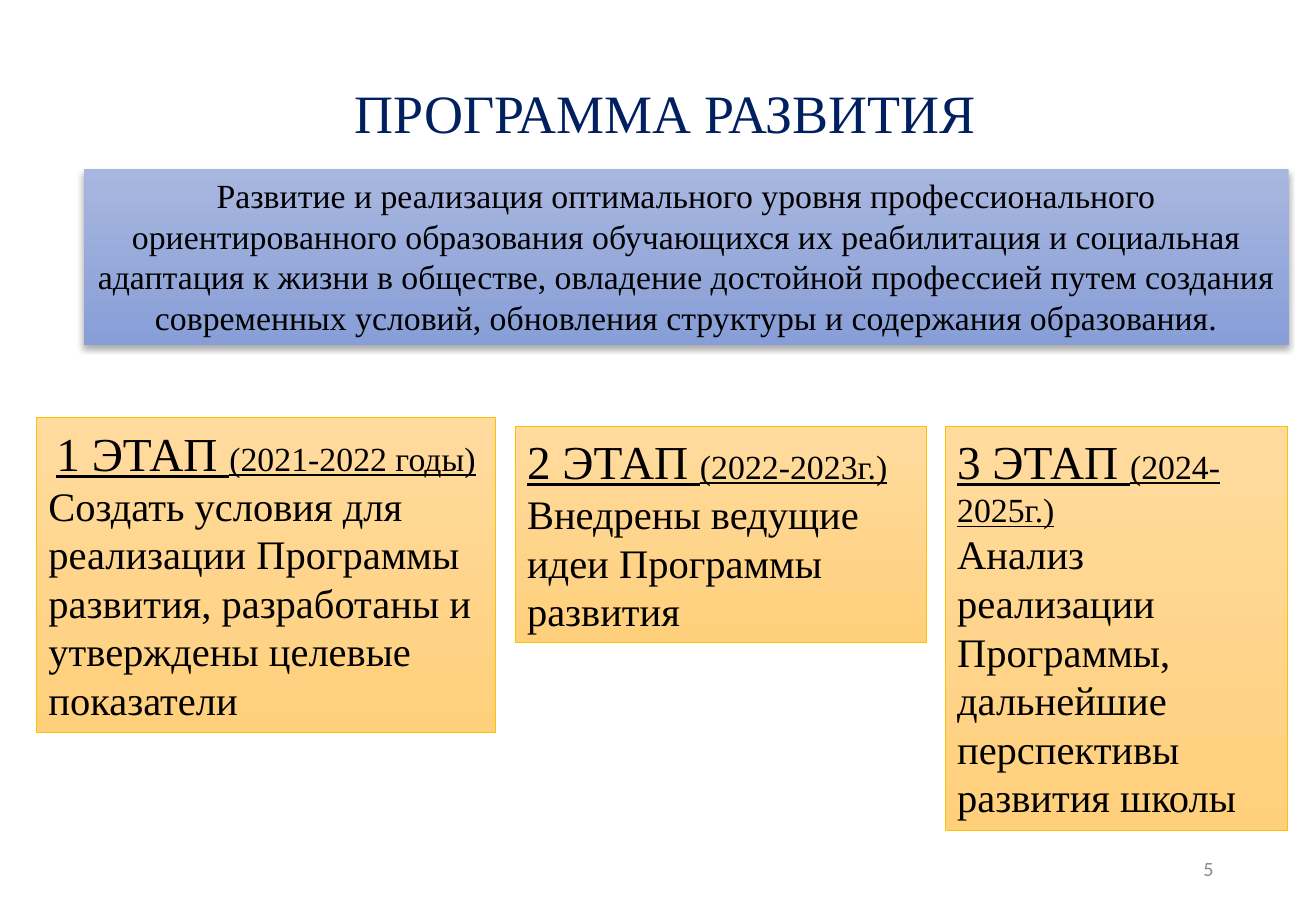
"""Build the development programme slide with its goal and three stages."""
from lxml import etree
from pptx import Presentation
from pptx.dml.color import RGBColor
from pptx.enum import shapes, text
from pptx.oxml import ns
from pptx.util import Pt

NAVY = RGBColor(0x00, 0x20, 0x60)
BLACK = RGBColor(0x00, 0x00, 0x00)
GRAY = RGBColor(0x8C, 0x8C, 0x8C)
BLUE_TOP = RGBColor(0xA8, 0xB7, 0xDF)
BLUE_BOTTOM = RGBColor(0x88, 0x9E, 0xD7)
AMBER_TOP = RGBColor(0xFF, 0xDB, 0x9E)
AMBER_BOTTOM = RGBColor(0xFF, 0xD0, 0x7C)
AMBER_LINE = RGBColor(0xFF, 0xC0, 0x00)

GOAL = (
    "Развитие и реализация оптимального уровня профессионального "
    "ориентированного образования обучающихся их реабилитация и социальная "
    "адаптация к жизни в обществе, овладение достойной профессией путем создания "
    "современных условий, обновления структуры и содержания образования."
)
LEFT, CENTER, RIGHT = text.PP_ALIGN.LEFT, text.PP_ALIGN.CENTER, text.PP_ALIGN.RIGHT
STAGES = [
    ("1 ЭТАП ", "(2021-2022 годы)", CENTER,
     "Создать условия для реализации Программы развития, "
     "разработаны и утверждены целевые показатели", (21.6, 247.7, 272.2, 186.5)),
    ("2 ЭТАП ", "(2022-2023г.)", LEFT,
     "Внедрены ведущие идеи Программы развития", (305.3, 252.7, 244.1, 128.2)),
    ("3 ЭТАП ", "(2024-2025г.)", LEFT,
     "Анализ реализации Программы, дальнейшие перспективы развития школы",
     (560.2, 252.7, 203, 239.8)),
]


class Painter:
    """Hold the text style and the page being drawn."""

    def __init__(self, page, font):
        self.page = page
        self.font = font

    def style(self, span, size, color=BLACK, font=None, underline=None):
        span.font.name = font or self.font
        span.font.size = Pt(size)
        span.font.color.rgb = color
        span.font.underline = underline

    def label(self, place, words, size, color, align, wrap=True, font=None):
        box = self.page.shapes.add_textbox(*map(Pt, place))
        frame = box.text_frame
        frame.text = words
        frame.word_wrap = wrap
        frame.vertical_anchor = text.MSO_ANCHOR.MIDDLE
        para = frame.paragraphs[0]
        para.alignment = align
        self.style(para.runs[0], size, color, font)

    def panel(self, place, top, bottom, line=None):
        box = self.page.shapes.add_shape(shapes.MSO_SHAPE.RECTANGLE, *map(Pt, place))
        box.shadow.inherit = False
        box.fill.gradient()
        box.fill.gradient_angle = 270
        for stop, color in zip(box.fill.gradient_stops, (top, bottom)):
            stop.color.rgb = color
        if line is None:
            box.line.fill.background()
        else:
            box.line.color.rgb = line
            box.line.width = Pt(0.5)
        box.text_frame.word_wrap = True
        box.text_frame.vertical_anchor = text.MSO_ANCHOR.TOP
        return box

    def drop_shadow(self, box):
        effects = box._element.spPr.find(ns.qn("a:effectLst"))
        shadow = etree.SubElement(
            effects, ns.qn("a:outerShdw"), blurRad=str(Pt(3.5)), dist=str(Pt(2.2)),
            dir="5400000", algn="ctr", rotWithShape="0")
        color = etree.SubElement(shadow, ns.qn("a:srgbClr"), val=str(BLACK))
        etree.SubElement(color, ns.qn("a:alpha"), val="32000")

    def goal(self, place, words):
        box = self.panel(place, BLUE_TOP, BLUE_BOTTOM)
        self.drop_shadow(box)
        box.text_frame.text = words
        para = box.text_frame.paragraphs[0]
        para.alignment = CENTER
        self.style(para.runs[0], 20)

    def stage(self, name, years, align, task, place):
        frame = self.panel(place, AMBER_TOP, AMBER_BOTTOM, AMBER_LINE).text_frame
        frame.text = f"{name}\n{task}"
        heading, body = frame.paragraphs
        heading.alignment, body.alignment = align, LEFT
        self.style(heading.runs[0], 28, underline=True)
        span = heading.add_run()
        span.text = years
        self.style(span, 20, underline=True)
        self.style(body.runs[0], 24)


def main():
    deck = Presentation()
    deck.slide_width, deck.slide_height = Pt(780), Pt(540)
    painter = Painter(deck.slides.add_slide(deck.slide_layouts[6]), "Times New Roman")
    painter.label((550.8, 500.4, 175.7, 28.8), "5", 12, GRAY, RIGHT, font="Calibri")
    painter.label((203, 43.2, 386.6, 46), "ПРОГРАММА РАЗВИТИЯ", 32, NAVY, LEFT, wrap=False)
    painter.goal((49.7, 100.1, 714.2, 104.4), GOAL)
    for stage in STAGES:
        painter.stage(*stage)
    deck.save("out.pptx")


if __name__ == "__main__":
    main()
